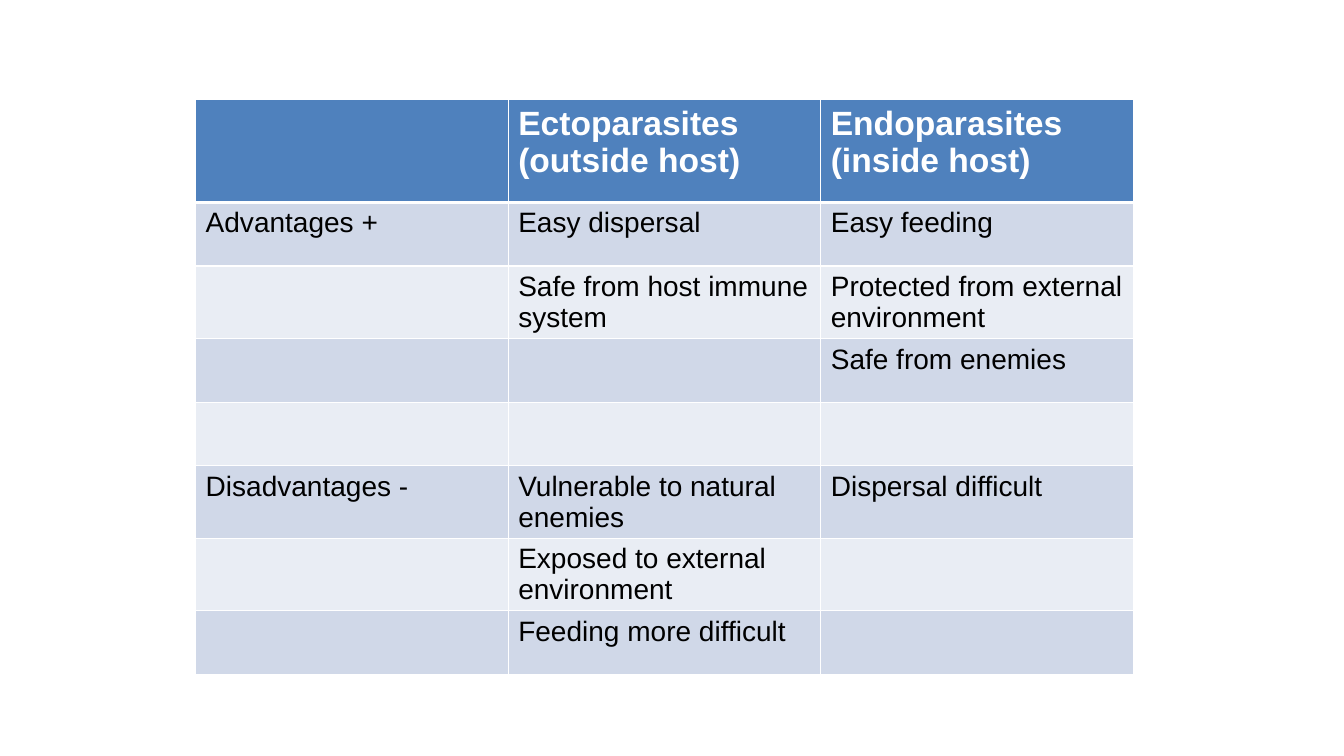
from lxml.etree import SubElement
from pptx import Presentation
from pptx.dml.color import RGBColor
from pptx.oxml.ns import qn
from pptx.util import Inches, Pt

ROWS = [
    ("", "Ectoparasites (outside host)", "Endoparasites (inside host)"),
    ("Advantages +", "Easy dispersal", "Easy feeding"),
    ("", "Safe from host immune system", "Protected from external environment"),
    ("", "", "Safe from enemies"),
    ("", "", ""),
    ("Disadvantages -", "Vulnerable to natural enemies", "Dispersal difficult"),
    ("", "Exposed to external environment", ""),
    ("", "Feeding more difficult", ""),
]
LEFT, TOP = 1.94, 0.99
COL_W, HEAD_H, ROW_H = 3.1, 1.02, 0.63
HEAD_FILL, BANDS = "4F81BD", ("E9EDF4", "D0D8E8")
WHITE, BLACK = "FFFFFF", "000000"


def color(hex_text):
    return RGBColor.from_string(hex_text)


def add_borders(cell, top, bottom):
    """Draw white cell edges, with the top and bottom widths in points."""
    tcPr = cell._tc.get_or_add_tcPr()
    for side, width in (("L", 1), ("R", 1), ("T", top), ("B", bottom)):
        ln = SubElement(tcPr, qn(f"a:ln{side}"), w=str(Pt(width)))
        fill = SubElement(ln, qn("a:solidFill"))
        SubElement(fill, qn("a:srgbClr"), val=WHITE)


def fill_cell(cell, text, row):
    head = row == 0
    add_borders(cell, top=3 if row == 1 else 1, bottom=3 if head else 1)
    cell.fill.solid()
    cell.fill.fore_color.rgb = color(HEAD_FILL if head else BANDS[row % 2])
    p = cell.text_frame.paragraphs[0]
    p.text = text
    for r in p.runs:
        r.font.name = "Arial"
        r.font.size = Pt(24 if head else 20)
        r.font.bold = head
        r.font.color.rgb = color(WHITE if head else BLACK)


prs = Presentation()
prs.slide_width, prs.slide_height = Inches(13.33), Inches(7.5)
s = prs.slides.add_slide(prs.slide_layouts[6])

n_rows, n_cols = len(ROWS), len(ROWS[0])
height = HEAD_H + ROW_H * (n_rows - 1)
table = s.shapes.add_table(n_rows, n_cols, Inches(LEFT), Inches(TOP),
                           Inches(COL_W * n_cols), Inches(height)).table
for col in table.columns:
    col.width = Inches(COL_W)
for i, texts in enumerate(ROWS):
    table.rows[i].height = Inches(ROW_H if i else HEAD_H)
    for j, text in enumerate(texts):
        fill_cell(table.cell(i, j), text, i)

prs.save("out.pptx")
